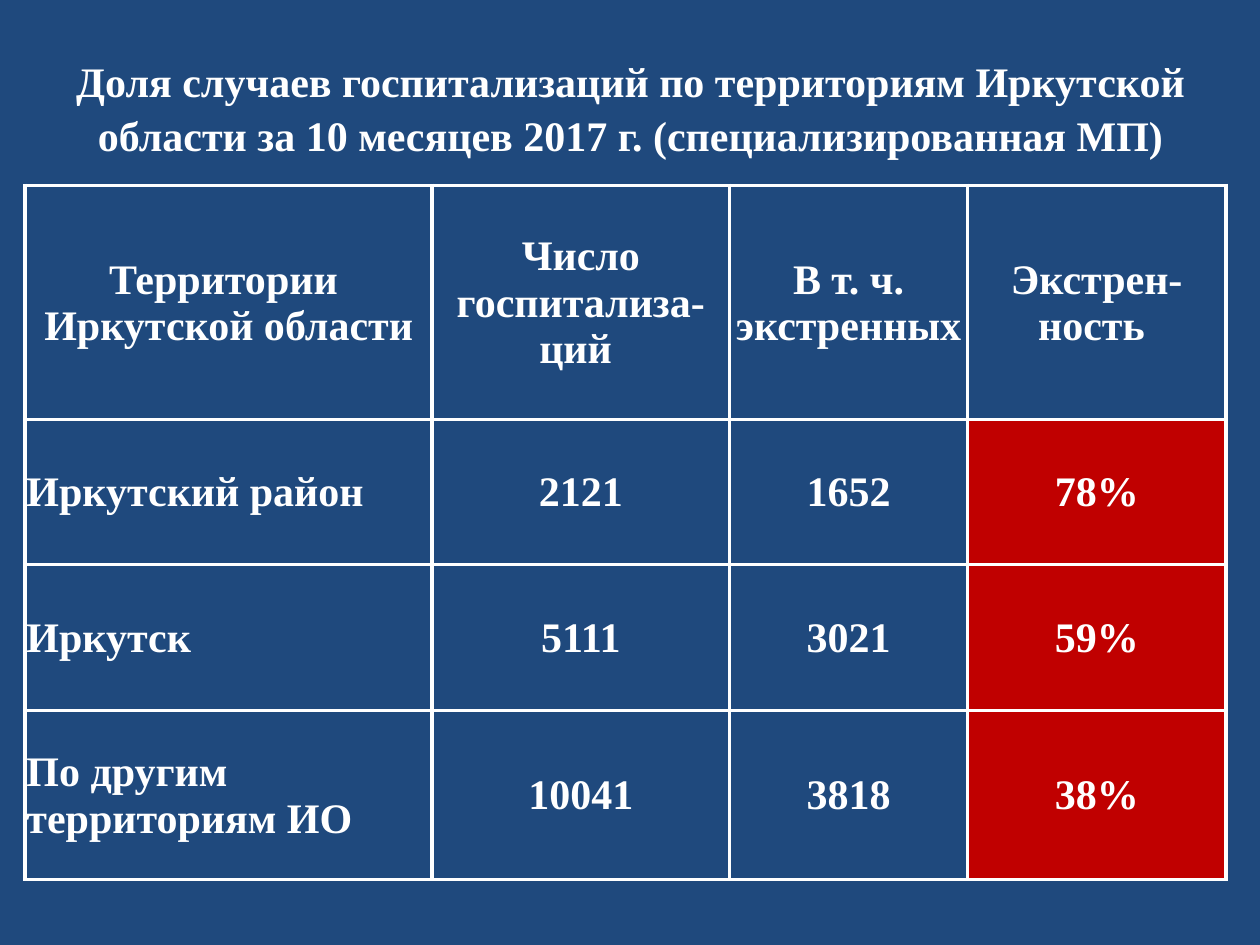
from lxml import etree
from pptx import Presentation
from pptx.dml.color import RGBColor
from pptx.enum.text import MSO_ANCHOR, PP_ALIGN
from pptx.oxml.ns import qn
from pptx.util import Inches, Pt

LEFT, CENTER = PP_ALIGN.LEFT, PP_ALIGN.CENTER
MIDDLE = MSO_ANCHOR.MIDDLE
NAVY, WHITE, RED = "1F497D", "FFFFFF", "C00000"
FONT = "Times New Roman"
TITLE = ("Доля случаев госпитализаций по территориям Иркутской области "
         "за 10 месяцев 2017 г. (специализированная МП)")
ROWS = [
    ["Территории \nИркутской области", "Число госпитализа-\nций ",
     "В т. ч. экстренных", "Экстрен-\nность "],
    ["Иркутский район", "2121", "1652", "78%"],
    ["Иркутск", "5111", "3021", "59%"],
    ["По другим территориям ИО", "10041", "3818", "38%"],
]
WIDTHS = [3.23, 2.36, 1.89, 2.05]
HEIGHTS = [1.86, 1.15, 1.16, 1.34]


def color(code):
    return RGBColor.from_string(code)


def paint(fill, code):
    fill.solid()
    fill.fore_color.rgb = color(code)


def write(frame, text, size=24, bold=True, code=WHITE, align=CENTER, space=None):
    frame.word_wrap = True
    frame.text = text
    for para in frame.paragraphs:
        para.alignment = align
        para.line_spacing = space
        for run in para.runs:
            font = run.font
            font.name, font.size, font.bold = FONT, Pt(size), bold
            font.color.rgb = color(code)


def border(cell, code=WHITE, width=2.25):
    props = cell._tc.get_or_add_tcPr()
    for spot, side in enumerate(("lnL", "lnR", "lnT", "lnB")):
        line = etree.Element(qn("a:" + side), w=str(Pt(width)))
        fill = etree.SubElement(line, qn("a:solidFill"))
        etree.SubElement(fill, qn("a:srgbClr"), val=code)
        props.insert(spot, line)


def add_title(slide):
    title = slide.shapes.title
    title.left, title.top = Inches(0.28), Inches(0.3)
    title.width, title.height = Inches(9.45), Inches(1.08)
    title.text_frame.vertical_anchor = MIDDLE
    write(title.text_frame, TITLE, space=1.07)


def fill_cell(cell, text, align, code):
    cell.margin_left = cell.margin_right = cell.margin_top = Inches(0.01)
    cell.margin_bottom = 0
    cell.vertical_anchor = MIDDLE
    write(cell.text_frame, text, align=align)
    if code:
        paint(cell.fill, code)
    else:
        cell.fill.background()
    border(cell)


def add_grid(slide):
    frame = slide.shapes.add_table(
        len(ROWS), len(WIDTHS), Inches(0.2), Inches(1.47),
        Inches(sum(WIDTHS)), Inches(sum(HEIGHTS)))
    table = frame.table
    table.horz_banding = False
    for col, width in zip(table.columns, WIDTHS):
        col.width = Inches(width)
    for row, height in zip(table.rows, HEIGHTS):
        row.height = Inches(height)
    last = len(WIDTHS) - 1
    for r, row in enumerate(ROWS):
        for c, text in enumerate(row):
            align = LEFT if r and c == 0 else CENTER
            code = RED if r and c == last else None
            fill_cell(table.cell(r, c), text, align, code)


def main():
    deck = Presentation()
    deck.slide_width, deck.slide_height = Inches(10), Inches(7.5)
    slide = deck.slides.add_slide(deck.slide_layouts[5])
    paint(slide.background.fill, NAVY)
    add_title(slide)
    add_grid(slide)
    deck.save("out.pptx")


if __name__ == "__main__":
    main()
